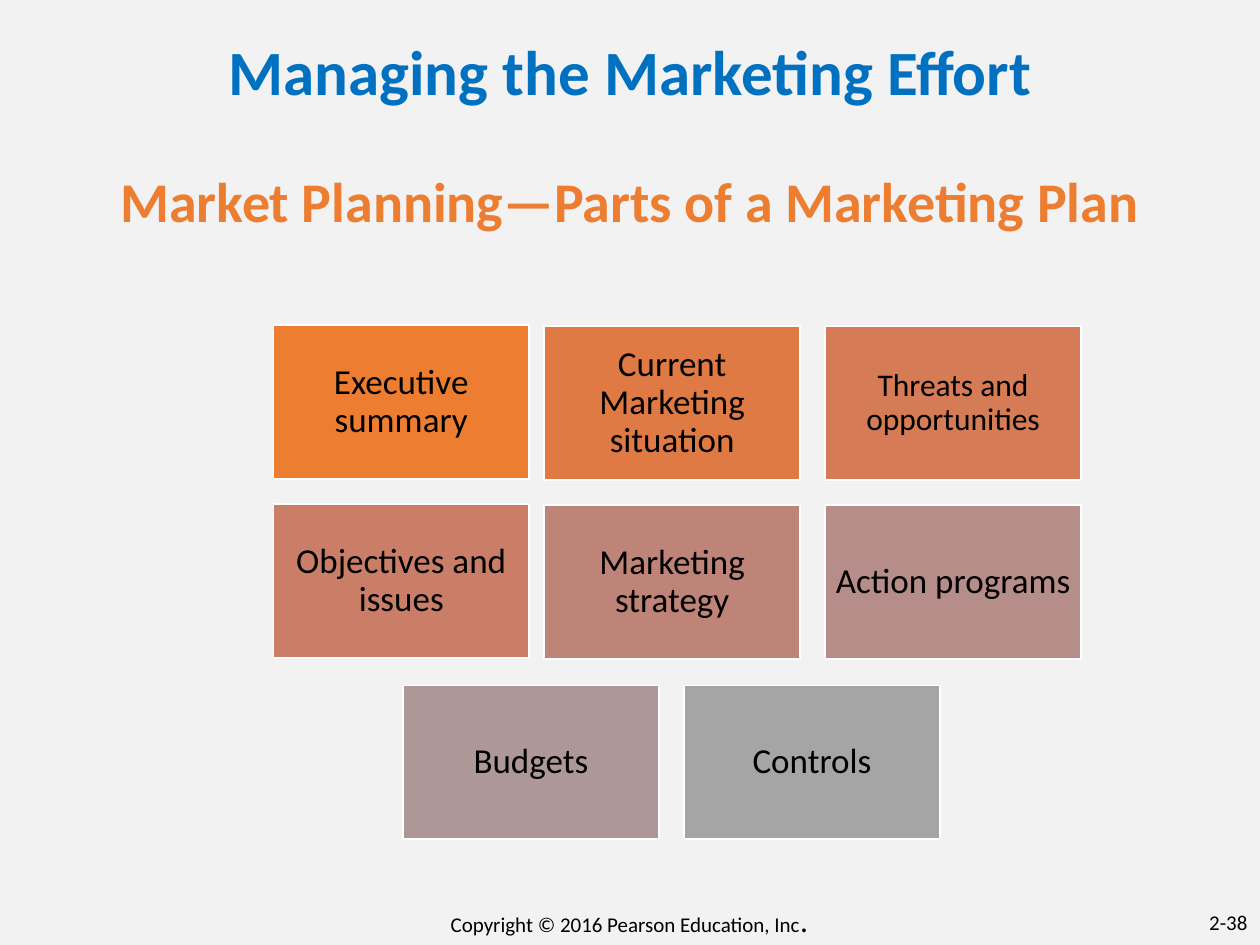
from lxml.etree import SubElement
from pptx import Presentation
from pptx.dml.color import RGBColor
from pptx.enum.shapes import MSO_SHAPE
from pptx.enum.text import MSO_ANCHOR, MSO_AUTO_SIZE, PP_ALIGN
from pptx.oxml.ns import qn
from pptx.util import Inches, Pt

COLORS = {
    "background": "F2F2F2",
    "title": "0070C0",
    "subtitle": "ED7D31",
    "text": "000000",
    "outline": "FFFFFF",
}
PLAN_PARTS = [
    ("Executive summary", "ED7D31", 20),
    ("Current Marketing situation", "E07A44", 20),
    ("Threats and opportunities", "D57B56", 18),
    ("Objectives and issues", "CA7E67", 20),
    ("Marketing strategy", "BF8478", 20),
    ("Action programs", "B68D88", 20),
    ("Budgets", "AD9897", 20),
    ("Controls", "A5A5A5", 20),
]
CARD_OFFSETS = [(0, 0), (2.15, 0.01), (4.38, 0.01)]
ROW_PITCH = 1.42
LAST_ROW_OFFSETS = [(1.03, 0.02), (3.26, 0.02)]
CARD_SIZE = (2.03, 1.22)


def rgb(value):
    """Return the color for a hex string."""
    return RGBColor.from_string(value)


def place(shape, box):
    """Move and size a shape to a box given in inches."""
    shape.left, shape.top, shape.width, shape.height = map(Inches, box)


def add_run(paragraph, text, size, color, bold=False):
    """Append one formatted run to a paragraph."""
    run = paragraph.add_run()
    run.text = text
    run.font.name = "Calibri"
    run.font.size = Pt(size)
    run.font.bold = bold
    run.font.color.rgb = rgb(color)


def format_frame(frame, alignment, anchor, line_spacing=1.0):
    """Set wrapping, anchor and alignment, and return the first paragraph."""
    frame.word_wrap = True
    frame.auto_size = MSO_AUTO_SIZE.NONE
    frame.vertical_anchor = anchor
    paragraph = frame.paragraphs[0]
    paragraph.alignment = alignment
    paragraph.line_spacing = line_spacing
    paragraph.space_before = Pt(0)
    return paragraph


def add_headings(slide, title_box, subtitle_box):
    """Fill the title and body placeholders."""
    title, subtitle = slide.shapes.title, slide.placeholders[1]
    place(title, title_box)
    paragraph = format_frame(title.text_frame, PP_ALIGN.CENTER, MSO_ANCHOR.BOTTOM, 0.9)
    add_run(paragraph, "Managing the Marketing Effort", 36, COLORS["title"], True)

    place(subtitle, subtitle_box)
    paragraph = format_frame(subtitle.text_frame, PP_ALIGN.CENTER, MSO_ANCHOR.TOP, 0.9)
    properties = paragraph._p.get_or_add_pPr()
    properties.set("marL", str(Inches(0.19)))
    properties.set("indent", str(Inches(-0.19)))
    SubElement(properties, qn("a:buNone"))
    add_run(paragraph, "Market Planning—Parts of a Marketing Plan", 32, COLORS["subtitle"], True)


def add_card(slide, box, text, fill, size):
    """Add one colored card with centered text."""
    card = slide.shapes.add_shape(MSO_SHAPE.RECTANGLE, *map(Inches, box))
    card.shadow.inherit = False
    card.fill.solid()
    card.fill.fore_color.rgb = rgb(fill)
    card.line.color.rgb = rgb(COLORS["outline"])
    card.line.width = Pt(1)
    frame = card.text_frame
    frame.margin_left = frame.margin_right = Inches(0.07)
    frame.margin_top = frame.margin_bottom = Inches(0.07)
    paragraph = format_frame(frame, PP_ALIGN.CENTER, MSO_ANCHOR.MIDDLE, 0.9)
    add_run(paragraph, text, size, COLORS["text"])


def add_plan_grid(slide, left, top):
    """Lay the plan parts out in two full rows and a centered last row."""
    rows = [CARD_OFFSETS, CARD_OFFSETS, LAST_ROW_OFFSETS]
    positions = [
        (left + x, top + row * ROW_PITCH + y)
        for row, offsets in enumerate(rows)
        for x, y in offsets
    ]
    for position, (text, fill, size) in zip(positions, PLAN_PARTS):
        add_card(slide, position + CARD_SIZE, text, fill, size)


def add_footer_text(slide, box, alignment, runs):
    """Add one footer text box from (text, size) runs."""
    shape = slide.shapes.add_textbox(*map(Inches, box))
    paragraph = format_frame(shape.text_frame, alignment, MSO_ANCHOR.TOP)
    for text, size in runs:
        add_run(paragraph, text, size, COLORS["text"])


def main():
    """Build and save the slide."""
    presentation = Presentation()
    presentation.slide_width, presentation.slide_height = Inches(10), Inches(7.5)
    slide = presentation.slides.add_slide(presentation.slide_layouts[1])
    slide.background.fill.solid()
    slide.background.fill.fore_color.rgb = rgb(COLORS["background"])
    add_headings(slide, (0.69, 0.17, 8.62, 0.75), (0.29, 1.33, 9.42, 0.75))
    add_plan_grid(slide, 2.17, 2.58)
    add_footer_text(slide, (3.21, 7.1, 3.57, 0.4), PP_ALIGN.CENTER,
                    [("Copyright © 2016 Pearson Education, Inc", 12), (".", 18)])
    add_footer_text(slide, (9.04, 7.17, 0.96, 0.3), PP_ALIGN.RIGHT, [("2-38", 12)])
    presentation.save("out.pptx")


if __name__ == "__main__":
    main()
